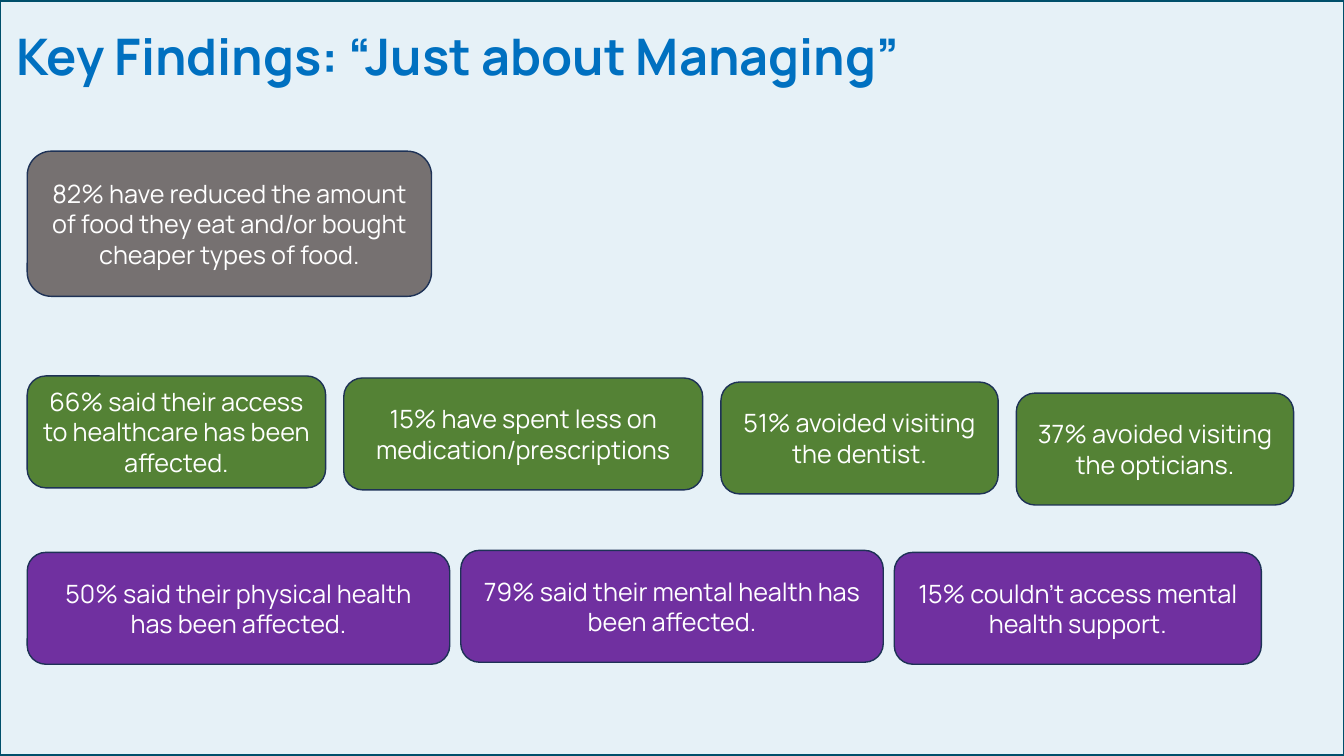
from dataclasses import dataclass

from pptx import Presentation
from pptx.dml.color import RGBColor
from pptx.enum.shapes import MSO_SHAPE
from pptx.enum.text import MSO_ANCHOR, PP_ALIGN
from pptx.util import Inches, Pt

RECT, ROUNDED = MSO_SHAPE.RECTANGLE, MSO_SHAPE.ROUNDED_RECTANGLE
MIDDLE, TOP = MSO_ANCHOR.MIDDLE, MSO_ANCHOR.TOP
CENTER, LEFT = PP_ALIGN.CENTER, PP_ALIGN.LEFT


@dataclass(frozen=True)
class Theme:
    font: str = "Manrope"
    background: str = "E6F1F7"
    frame: str = "004F6B"
    title: str = "0070C0"
    outline: str = "1E3256"
    text: str = "FFFFFF"
    food: str = "767171"
    healthcare: str = "548235"
    wellbeing: str = "7030A0"
    title_size: int = 36
    body_size: int = 18


@dataclass(frozen=True)
class Card:
    text: str
    top: float
    width: float
    height: float = 1.11


@dataclass(frozen=True)
class CardRow:
    fill: str
    gap: float
    cards: tuple[Card, ...]


THEME = Theme()
ROW_LEFT = 0.27
ROWS = (
    CardRow(THEME.food, 0, (
        Card("82% have reduced the amount of food they eat and/or bought "
             "cheaper types of food.", 1.5, 4.01, 1.44),
    )),
    CardRow(THEME.healthcare, 0.18, (
        Card("66% said their access to healthcare has been affected.", 3.73, 2.96),
        Card("15% have spent less on medication/prescriptions", 3.75, 3.56),
        Card("51% avoided visiting the dentist.", 3.79, 2.75),
        Card("37% avoided visiting the opticians.", 3.9, 2.75),
    )),
    CardRow(THEME.wellbeing, 0.11, (
        Card("50% said their physical health has been affected.", 5.48, 4.19),
        Card("79% said their mental health has been affected.", 5.46, 4.19),
        Card("15% couldn’t access mental health support.", 5.48, 3.64),
    )),
)


def rgb(value: str) -> RGBColor:
    """Turn a hex string into a colour."""
    return RGBColor.from_string(value)


def write(sp, text: str, *, size: int = THEME.body_size, color: str = THEME.text,
          bold: bool = False, align=CENTER, anchor=MIDDLE,
          inset_x: float = 0.1, inset_y: float = 0.05) -> None:
    """Fill a shape with one formatted paragraph."""
    tf = sp.text_frame
    tf.word_wrap = True
    tf.vertical_anchor = anchor
    tf.margin_left = tf.margin_right = Inches(inset_x)
    tf.margin_top = tf.margin_bottom = Inches(inset_y)
    p = tf.paragraphs[0]
    p.alignment = align
    r = p.add_run()
    r.text = text
    r.font.name = THEME.font
    r.font.size = Pt(size)
    r.font.bold = bold
    r.font.color.rgb = rgb(color)


def add_box(s, kind, left: float, top: float, width: float, height: float, *,
            line: str, weight: float, fill: str | None = None):
    """Draw an outlined shape, filled if a colour is given."""
    sp = s.shapes.add_shape(kind, Inches(left), Inches(top),
                            Inches(width), Inches(height))
    sp.shadow.inherit = False
    if fill:
        sp.fill.solid()
        sp.fill.fore_color.rgb = rgb(fill)
    else:
        sp.fill.background()
    sp.line.color.rgb = rgb(line)
    sp.line.width = Pt(weight)
    return sp


def add_row(s, row: CardRow) -> None:
    """Lay out a row of cards from left to right."""
    left = ROW_LEFT
    for card in row.cards:
        sp = add_box(s, ROUNDED, left, card.top, card.width, card.height,
                     line=THEME.outline, weight=1, fill=row.fill)
        write(sp, card.text)
        left += card.width + row.gap


def main() -> None:
    """Build and save the findings slide."""
    prs = Presentation()
    prs.slide_width, prs.slide_height = Inches(13.33), Inches(7.5)
    s = prs.slides.add_slide(prs.slide_layouts[6])
    s.background.fill.solid()
    s.background.fill.fore_color.rgb = rgb(THEME.background)
    add_box(s, RECT, -0.01, 0, 13.35, 7.5, line=THEME.frame, weight=3)
    title = s.shapes.add_textbox(Inches(0), Inches(0.13), Inches(11.61), Inches(0.84))
    write(title, "Key Findings: “Just about Managing”", size=THEME.title_size,
          color=THEME.title, bold=True, align=LEFT, anchor=TOP,
          inset_x=0.16, inset_y=0.12)
    for row in ROWS:
        add_row(s, row)
    prs.save("out.pptx")


if __name__ == "__main__":
    main()
